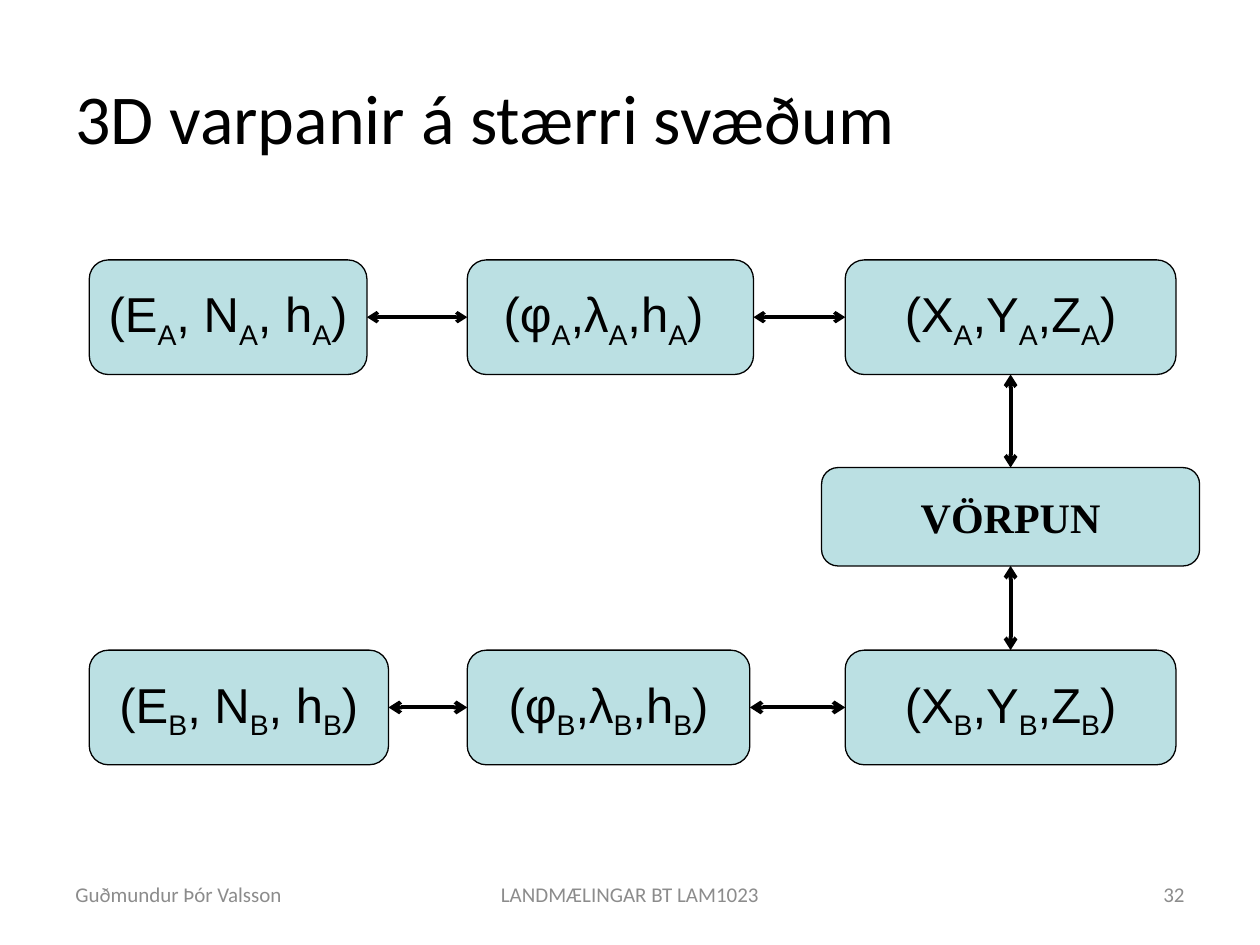
import pptx
import pptx.util
import pptx.dml.color
import pptx.enum.shapes
import pptx.enum.text
import pptx.oxml.ns
import lxml.etree

Pt = pptx.util.Pt
ALIGN = pptx.enum.text.PP_ALIGN
MIDDLE = pptx.enum.text.MSO_ANCHOR.MIDDLE
HUES = {"ink": "000000", "box": "BBE0E3", "foot": "8C8C8C"}
TOP, LEFT, BOTTOM, RIGHT = range(4)


def color(name):
    return pptx.dml.color.RGBColor.from_string(HUES[name])


def style(run, size, face, hue="ink", bold=False):
    run.font.size = Pt(size)
    run.font.name = face
    run.font.bold = bold
    run.font.color.rgb = color(hue)


def add_text(slide, box, text, size, hue="ink", align=ALIGN.LEFT):
    frame = slide.shapes.add_textbox(*map(Pt, box)).text_frame
    frame.word_wrap = True
    frame.vertical_anchor = MIDDLE
    para = frame.paragraphs[0]
    para.text = text
    para.alignment = align
    style(para.runs[0], size, "Calibri", hue)


def add_box(slide, box, wrap=True):
    kind = pptx.enum.shapes.MSO_SHAPE.ROUNDED_RECTANGLE
    shape = slide.shapes.add_shape(kind, *map(Pt, box))
    shape.shadow.inherit = False
    shape.fill.solid()
    shape.fill.fore_color.rgb = color("box")
    shape.line.color.rgb = color("ink")
    shape.line.width = Pt(0.75)
    frame = shape.text_frame
    frame.word_wrap = wrap
    frame.vertical_anchor = MIDDLE
    frame.margin_left = frame.margin_right = Pt(10.5)
    frame.margin_top = frame.margin_bottom = Pt(5.5)
    frame.paragraphs[0].alignment = ALIGN.CENTER
    return shape


def add_coords(slide, box, parts, sub, wrap):
    shape = add_box(slide, box, wrap)
    para = shape.text_frame.paragraphs[0]
    for part in parts[:-1]:
        for text, base in ((part, None), (sub, "-25000")):
            run = para.add_run()
            run.text = text
            style(run, 28, "Arial")
            if base:
                run.font._element.set("baseline", base)
    run = para.add_run()
    run.text = parts[-1]
    style(run, 28, "Arial")
    return shape


def link(slide, start, out, end, into, width=2.25):
    kind = pptx.enum.shapes.MSO_CONNECTOR.STRAIGHT
    line = slide.shapes.add_connector(kind, 0, 0, 0, 0)
    line.begin_connect(start, out)
    line.end_connect(end, into)
    line.line.color.rgb = color("ink")
    line.line.width = Pt(width)
    qn = pptx.oxml.ns.qn
    pen = line.line._get_or_add_ln()
    for tag in ("a:headEnd", "a:tailEnd"):
        lxml.etree.SubElement(pen, qn(tag), type="arrow")
    lxml.etree.SubElement(line._element.spPr, qn("a:effectLst"))


def add_row(slide, box, sub, widths, close, wraps, stroke):
    left, top, pitch, height = box
    parts = (("(E", ", N", ", h", ")"), ("(φ", ",λ", ",h", close), ("(X", ",Y", ",Z", ")"))
    row = [
        add_coords(slide, (left + i * pitch, top, width, height), part, sub, wrap)
        for i, (width, part, wrap) in enumerate(zip(widths, parts, wraps))
    ]
    for start, end in zip(row, row[1:]):
        link(slide, start, RIGHT, end, LEFT, stroke)
    return row


def add_flow(slide, box):
    left, top, width, height = box
    pitch, tall = 216, 65.5
    upper = add_row(slide, (left, top, pitch, tall), "A", (158.7, 163.6, 189),
                    ") ", (False, False, True), 2)
    lower = add_row(slide, (left, top + height - tall, pitch, tall), "B", (171, 161.5, 189),
                    ")", (True, True, True), 2.25)
    wide = 216
    mid = left + 2 * pitch + 189 / 2
    hub = add_box(slide, (mid - wide / 2, top + 118.7, wide, 56.2))
    para = hub.text_frame.paragraphs[0]
    para.text = "VÖRPUN"
    style(para.runs[0], 24, "Times New Roman", bold=True)
    link(slide, upper[-1], BOTTOM, hub, TOP)
    link(slide, hub, BOTTOM, lower[-1], TOP)


def add_foot(slide, box):
    left, top, width, height = box
    side, mid = 168, 228
    parts = (
        (left, side, "Guðmundur Þór Valsson", ALIGN.LEFT),
        (left + (width - mid) / 2, mid, "LANDMÆLINGAR BT LAM1023", ALIGN.CENTER),
        (left + width - side, side, "32", ALIGN.RIGHT),
    )
    for x, wide, text, align in parts:
        add_text(slide, (x, top, wide, height), text, 12, "foot", align)


def main():
    deck = pptx.Presentation()
    deck.slide_width, deck.slide_height = Pt(720), Pt(540)
    slide = deck.slides.add_slide(deck.slide_layouts[6])
    add_text(slide, (36, 21.6, 648, 90), "3D varpanir á stærri svæðum", 40)
    add_flow(slide, (51, 148.5, 621, 288.5))
    add_foot(slide, (36, 492, 648, 37.5))
    deck.save("out.pptx")


if __name__ == "__main__":
    main()
